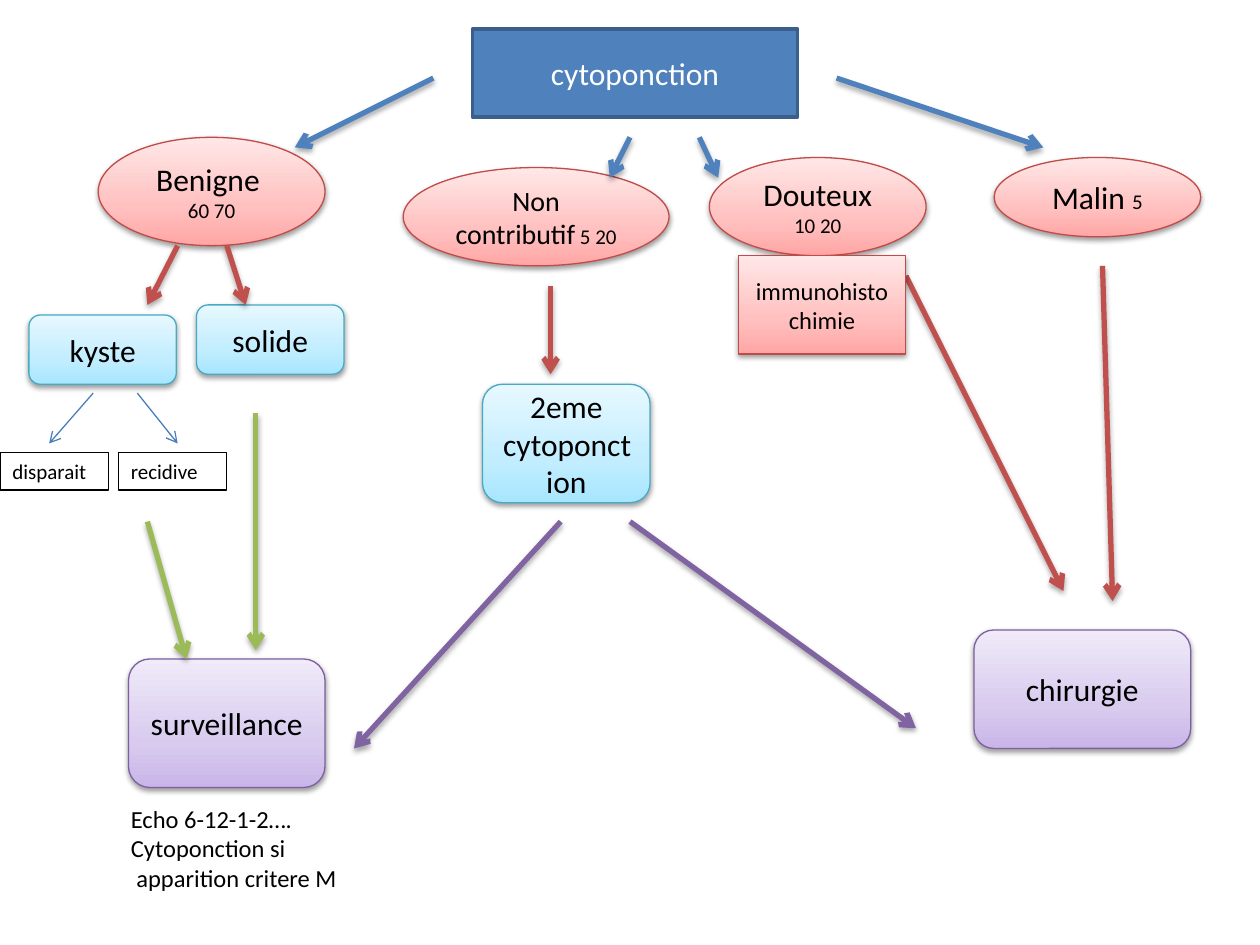
from copy import deepcopy

from lxml import etree
from pptx import Presentation
from pptx.dml.color import RGBColor
from pptx.enum import shapes, text
from pptx.oxml.ns import qn
from pptx.util import Inches, Pt

BLACK = RGBColor(0x00, 0x00, 0x00)
WHITE = RGBColor(0xFF, 0xFF, 0xFF)
BLUE = RGBColor(0x4F, 0x81, 0xBD)
BLUE_EDGE = RGBColor(0x3A, 0x5F, 0x8C)
THIN_BLUE = RGBColor(0x4B, 0x7E, 0xBC)
RED = RGBColor(0xC0, 0x50, 0x4D)
GREEN = RGBColor(0x9B, 0xBB, 0x59)
PURPLE = RGBColor(0x80, 0x64, 0xA2)

# Palette: edge colour, then the gradient from bottom to top
PINK_NODE = (RGBColor(0xBF, 0x4C, 0x48), RGBColor(0xFF, 0xA6, 0xA5),
             RGBColor(0xFF, 0xC0, 0xBF), RGBColor(0xFF, 0xE7, 0xE7))
AQUA_NODE = (RGBColor(0x46, 0xAA, 0xC5), RGBColor(0xA7, 0xE6, 0xFF),
             RGBColor(0xC1, 0xED, 0xFF), RGBColor(0xE7, 0xF8, 0xFF))
LILAC_NODE = (RGBColor(0x7D, 0x60, 0xA0), RGBColor(0xC9, 0xB5, 0xE8),
              RGBColor(0xD8, 0xCB, 0xEE), RGBColor(0xF0, 0xEA, 0xF9))
STOPS = (0, 0.35, 1)

RECT = shapes.MSO_SHAPE.RECTANGLE
ROUND = shapes.MSO_SHAPE.ROUNDED_RECTANGLE
OVAL = shapes.MSO_SHAPE.OVAL


def place(box, left, top, width, height):
    """Turn a position inside a region box into slide lengths."""
    return (Inches(box[0] + left), Inches(box[1] + top),
            Inches(width), Inches(height))


def write(frame, paras, align, color=BLACK):
    """Each paragraph is a list of (wording, size) spans."""
    frame.word_wrap = True
    for index, spans in enumerate(paras):
        para = frame.paragraphs[0] if index == 0 else frame.add_paragraph()
        para.alignment = align
        para.font.name = "Calibri"
        para.font.color.rgb = color
        para.font.size = Pt(spans[0][1])
        for wording, size in spans:
            span = para.add_run()
            span.text = wording
            if size != spans[0][1]:
                span.font.size = Pt(size)


def add_shadow(properties, opacity, distance):
    effects = properties.find(qn("a:effectLst"))
    if effects is None:
        effects = etree.SubElement(properties, qn("a:effectLst"))
    shadow = etree.SubElement(effects, qn("a:outerShdw"), blurRad="40000",
                              dist=str(distance), dir="5400000", rotWithShape="0")
    color = etree.SubElement(shadow, qn("a:srgbClr"), val="000000")
    etree.SubElement(color, qn("a:alpha"), val=str(opacity * 1000))


def add_node(page, box, at, kind, palette, *paras):
    node = page.shapes.add_shape(kind, *place(box, *at))
    node.shadow.inherit = False
    edge, *colors = palette
    node.fill.gradient()
    node.fill.gradient_angle = 90
    stop_list = node.fill._fill._gradFill.find(qn("a:gsLst"))
    stop_list.append(deepcopy(stop_list[0]))
    for stop, position, color in zip(node.fill.gradient_stops, STOPS, colors):
        stop.position = position
        stop.color.rgb = color
    node.line.color.rgb = edge
    node.line.width = Pt(0.75)
    add_shadow(node._element.spPr, 38, 20000)
    node.text_frame.vertical_anchor = text.MSO_ANCHOR.MIDDLE
    write(node.text_frame, paras, text.PP_ALIGN.CENTER)


def add_label(page, box, at, *paras, framed=False):
    label = page.shapes.add_textbox(*place(box, *at))
    if framed:
        label.line.color.rgb = BLACK
        label.line.width = Pt(0.75)
    write(label.text_frame, paras, text.PP_ALIGN.LEFT)
    label.text_frame.auto_size = text.MSO_AUTO_SIZE.SHAPE_TO_FIT_TEXT


def add_arrow(page, box, start, end, color, width=3):
    left, top = box
    arrow = page.shapes.add_connector(
        shapes.MSO_CONNECTOR.STRAIGHT, Inches(left + start[0]), Inches(top + start[1]),
        Inches(left + end[0]), Inches(top + end[1]))
    arrow.line.color.rgb = color
    arrow.line.width = Pt(width)
    etree.SubElement(arrow.line._get_or_add_ln(), qn("a:tailEnd"), type="arrow")
    properties = arrow._element.spPr
    if width > 1:
        add_shadow(properties, 35, 23000)
    else:
        etree.SubElement(properties, qn("a:effectLst"))


def add_benign_branch(page, box):
    add_node(page, box, (0.78, 0, 1.8, 0.86), OVAL, PINK_NODE,
             [("Benigne ", 18)], [("60 70", 12)])
    # Cyst or solid
    add_node(page, box, (0.23, 1.41, 1.17, 0.55), ROUND, AQUA_NODE, [("kyste", 18)])
    add_node(page, box, (1.56, 1.33, 1.17, 0.55), ROUND, AQUA_NODE, [("solide", 18)])
    add_arrow(page, box, (1.41, 0.86), (1.17, 1.33), RED)
    add_arrow(page, box, (1.8, 0.86), (1.95, 1.33), RED)
    # What becomes of the cyst
    for left, wording in ((0, "disparait"), (0.94, "recidive")):
        add_label(page, box, (left, 2.5, 0.86, 0.3), [(wording, 12)], framed=True)
    add_arrow(page, box, (0.74, 2.03), (0.39, 2.43), THIN_BLUE, 0.75)
    add_arrow(page, box, (1.09, 2.03), (1.41, 2.43), THIN_BLUE, 0.75)
    # Follow-up
    add_node(page, box, (1.02, 4.14, 1.56, 1.02), ROUND, LILAC_NODE,
             [("surveillance", 18)])
    add_arrow(page, box, (2.03, 2.19), (2.03, 4.07), GREEN)
    add_arrow(page, box, (1.17, 3.05), (1.48, 4.14), GREEN)
    add_label(page, box, (0.94, 5.24, 2.03, 0.81), [("Echo 6-12-1-2….", 14)],
              [("Cytoponction si", 14)], [(" apparition critere M", 14)])


def add_inconclusive_branch(page, box):
    add_node(page, box, (0.39, 0, 2.11, 0.78), OVAL, PINK_NODE,
             [("Non contributif", 16), (" 5 20 ", 12)])
    add_node(page, box, (1.02, 1.72, 1.33, 0.94), ROUND, AQUA_NODE,
             [("2eme cytoponction", 18)])
    add_arrow(page, box, (1.56, 0.94), (1.56, 1.64), RED)
    add_arrow(page, box, (1.64, 2.81), (0, 4.61), PURPLE)
    add_arrow(page, box, (2.19, 2.81), (4.46, 4.45), PURPLE)


def add_surgical_branch(page, box):
    # Doubtful result with its extra test
    add_node(page, box, (0, 0, 1.72, 0.78), OVAL, PINK_NODE,
             [("Douteux ", 18), ("10 20", 12)])
    add_arrow(page, box, (1.56, 0.94), (2.81, 3.44), RED)
    add_node(page, box, (0.23, 0.78, 1.33, 0.78), RECT, PINK_NODE,
             [("immunohistochimie", 14)])
    # Malignant result
    add_node(page, box, (2.26, 0, 1.64, 0.63), OVAL, PINK_NODE,
             [("Malin ", 18), ("5", 12)])
    add_arrow(page, box, (3.12, 0.86), (3.2, 3.52), RED)
    # Surgery
    add_node(page, box, (2.1, 3.75, 1.72, 0.94), ROUND, LILAC_NODE, [("chirurgie", 18)])


def add_root(page, box):
    root = page.shapes.add_shape(RECT, *place(box, 1.41, 0, 2.58, 0.7))
    root.shadow.inherit = False
    root.fill.solid()
    root.fill.fore_color.rgb = BLUE
    root.line.color.rgb = BLUE_EDGE
    root.line.width = Pt(2)
    root.text_frame.vertical_anchor = text.MSO_ANCHOR.MIDDLE
    write(root.text_frame, [[("cytoponction", 18)]], text.PP_ALIGN.CENTER, WHITE)
    # One arrow to each of the four results
    for start, end in (((1.1, 0.39), (0, 0.94)), ((2.66, 0.86), (2.5, 1.18)),
                       ((3.21, 0.86), (3.36, 1.18)), ((4.3, 0.39), (5.94, 0.94))):
        add_arrow(page, box, start, end, BLUE)


def main():
    deck = Presentation()
    deck.slide_width, deck.slide_height = Inches(10), Inches(7.5)
    page = deck.slides.add_slide(deck.slide_layouts[6])
    add_benign_branch(page, (0, 1.09))
    add_inconclusive_branch(page, (2.81, 1.33))
    add_surgical_branch(page, (5.63, 1.25))
    add_root(page, (2.34, 0.23))
    deck.save("out.pptx")


if __name__ == "__main__":
    main()
